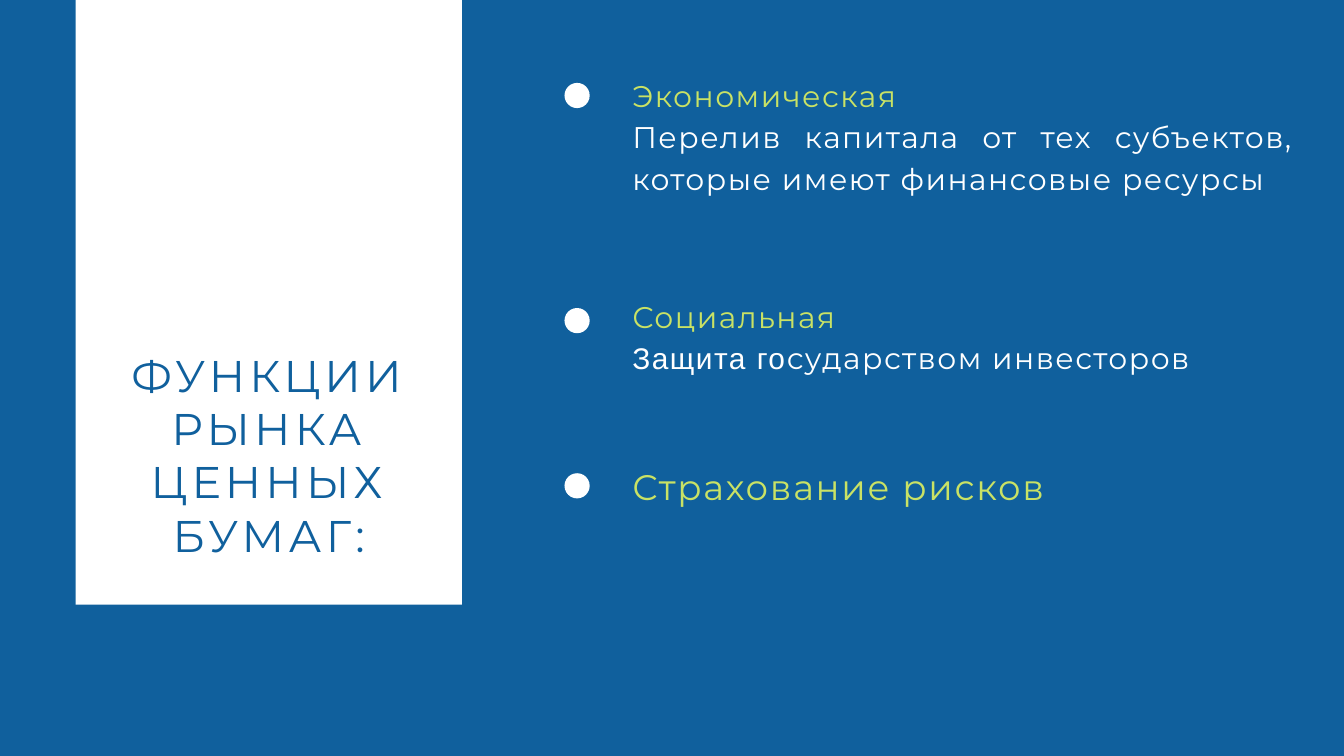
import pptx
import pptx.dml.color
import pptx.enum.shapes
import pptx.enum.text
import pptx.util

Pt = pptx.util.Pt
ALIGN = pptx.enum.text.PP_ALIGN
SHAPE = pptx.enum.shapes.MSO_SHAPE
COLORS = {"blue": "10609D", "white": "FFFFFF", "lime": "C9E265"}
FONT = "Montserrat"
DOT = 27
DOT_LEFT = 604.8
TEXT_LEFT = 677.5
TEXT_WIDTH = 708.5


def rgb(name):
    return pptx.dml.color.RGBColor.from_string(COLORS[name])


def add_block(slide, kind, left, top, width, height):
    block = slide.shapes.add_shape(kind, Pt(left), Pt(top), Pt(width), Pt(height))
    block.shadow.inherit = False
    block.fill.solid()
    block.fill.fore_color.rgb = rgb("white")
    block.line.fill.background()


def add_text(slide, box, lines, size, lead, track, align=ALIGN.LEFT):
    frame = slide.shapes.add_textbox(*map(Pt, box)).text_frame
    frame.word_wrap = True
    frame.auto_size = pptx.enum.text.MSO_AUTO_SIZE.SHAPE_TO_FIT_TEXT
    frame.margin_left = frame.margin_right = 0
    frame.margin_top = frame.margin_bottom = 0
    for index, (color, parts) in enumerate(lines):
        para = frame.add_paragraph() if index else frame.paragraphs[0]
        para.alignment = align
        para.line_spacing = Pt(lead)
        for text, face in parts:
            run = para.add_run()
            run.text = text
            run.font.name = face
            run.font.size = Pt(size)
            run.font.color.rgb = rgb(color)
            run._r.get_or_add_rPr().set("spc", str(round(track * 100)))


def add_item(slide, dot, top, height, lines, size=32, align=ALIGN.LEFT):
    add_block(slide, SHAPE.OVAL, DOT_LEFT, dot, DOT, DOT)
    box = (TEXT_LEFT, top, TEXT_WIDTH, height)
    add_text(slide, box, lines, size, round(size * 1.4, 1), size * 0.05, align)


def main():
    deck = pptx.Presentation()
    deck.slide_width, deck.slide_height = Pt(1440), Pt(810)
    slide = deck.slides.add_slide(deck.slide_layouts[6])
    slide.background.fill.solid()
    slide.background.fill.fore_color.rgb = rgb("blue")

    add_block(slide, SHAPE.RECTANGLE, 81, -11.5, 414, 659.5)
    title = [("blue", [("ФУНКЦИИ РЫНКА ЦЕННЫХ БУМАГ:", FONT)])]
    add_text(slide, (126, 373, 324, 226), title, 47.5, 57, 4.5, ALIGN.CENTER)

    add_item(slide, 88.8, 76.3, 175, [
        ("lime", [("Экономическая", FONT)]),
        ("white", [("Перелив капитала от тех субъектов, "
                    "которые имеют финансовые ресурсы", FONT)]),
    ], align=ALIGN.JUSTIFY)
    add_item(slide, 330, 313.2, 86.4, [
        ("lime", [("Социальная", FONT)]),
        ("white", [("Защита го", "Arial"), ("сударством инвесторов", FONT)]),
    ])
    add_item(slide, 507, 490.3, 51, [
        ("lime", [("Страхование рисков", FONT)]),
    ], size=38)
    deck.save("out.pptx")


if __name__ == "__main__":
    main()
